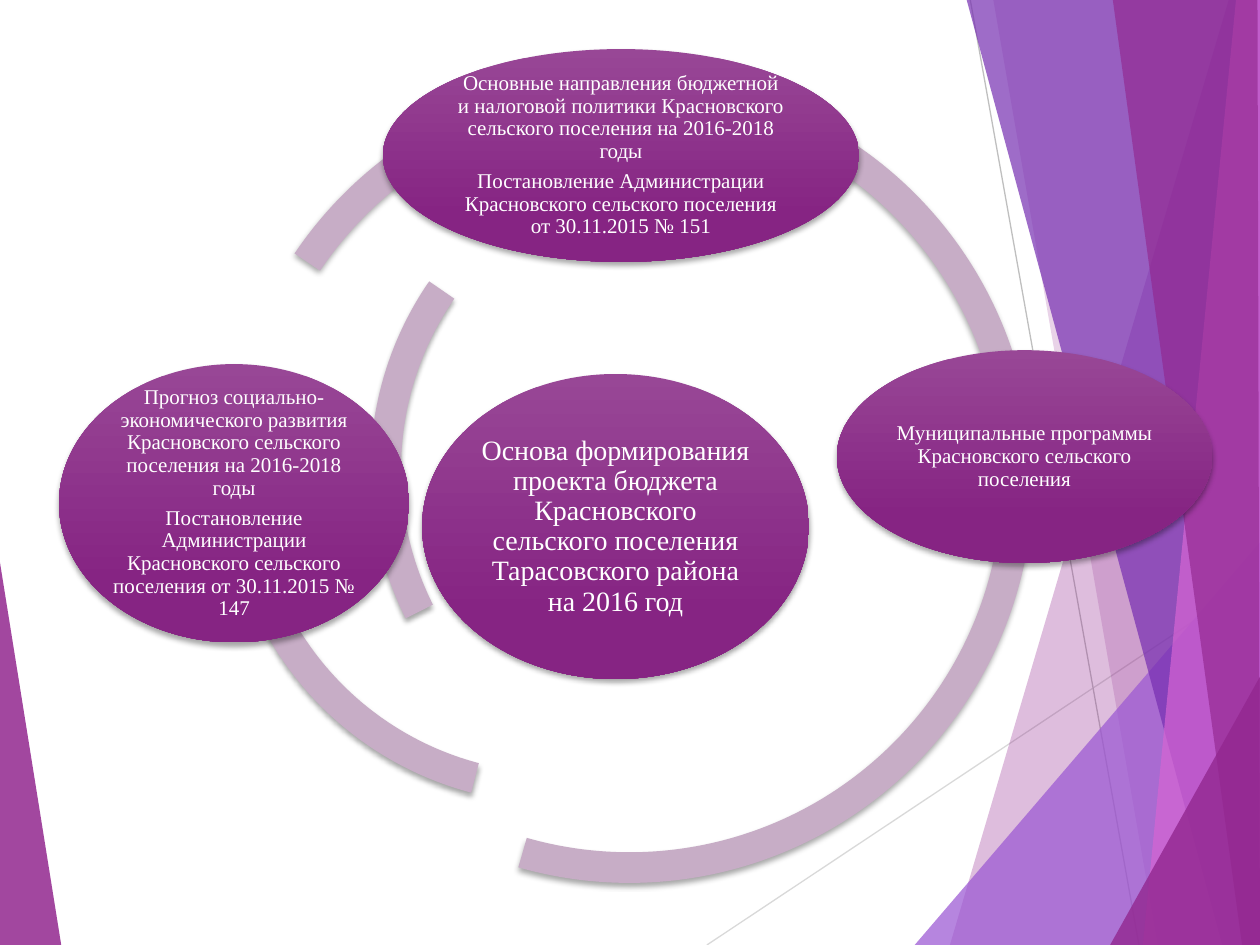
from lxml import etree
from pptx import Presentation
from pptx.dml.color import RGBColor
from pptx.enum.shapes import MSO_CONNECTOR, MSO_SHAPE
from pptx.enum.text import MSO_ANCHOR, PP_ALIGN
from pptx.oxml import parse_xml
from pptx.oxml.ns import qn
from pptx.util import Cm, Pt

STRAIGHT = MSO_CONNECTOR.STRAIGHT
ELLIPSE, BLOCK_ARC = MSO_SHAPE.OVAL, MSO_SHAPE.BLOCK_ARC
MIDDLE, CENTER = MSO_ANCHOR.MIDDLE, PP_ALIGN.CENTER

WHITE = RGBColor(0xFF, 0xFF, 0xFF)
PLUM = RGBColor(0x92, 0x27, 0x8F)
VIOLET = RGBColor(0x9B, 0x57, 0xD3)
INDIGO = RGBColor(0x76, 0x2E, 0xB1)
PINK = RGBColor(0xD6, 0x65, 0xD3)
RING = RGBColor(0xC7, 0xAD, 0xC6)
OVAL_TOP = RGBColor(0x98, 0x47, 0x96)
OVAL_BOTTOM = RGBColor(0x86, 0x24, 0x83)
PALE_GRAY = RGBColor(0xD9, 0xD9, 0xD9)
GRAY = RGBColor(0xBF, 0xBF, 0xBF)

FONT = "Times New Roman"
WIDTH, HEIGHT = 25.4, 19.05
TOP, EDGE = -0.03, 25.43

LEFT_SHARD = ([(TOP, 11.15), (1.24, 19.08), (TOP, HEIGHT)], PLUM, 85)
RIGHT_SHARDS = [
    ([(24.77, 0), (19.15, HEIGHT), (EDGE, HEIGHT), (EDGE, 0)], PLUM, 30),
    ([(20.02, TOP), (23.34, HEIGHT), (EDGE, HEIGHT), (EDGE, TOP)], PLUM, 20),
    ([(18.44, HEIGHT), (EDGE, 10.9), (EDGE, HEIGHT)], VIOLET, 72),
    ([(19.48, TOP), (24.64, HEIGHT), (EDGE, HEIGHT), (EDGE, TOP)], INDIGO, 70),
    ([(24.92, TOP), (23.04, HEIGHT), (EDGE, HEIGHT), (WIDTH, TOP)], PINK, 70),
    ([(22.43, TOP), (25.04, HEIGHT), (WIDTH, HEIGHT), (25.35, TOP)], PLUM, 65),
    ([(22.38, HEIGHT), (EDGE, 13.59), (EDGE, HEIGHT)], PLUM, 80),
]
RAYS = [
    ((14.25, HEIGHT), (EDGE, 11.61), PALE_GRAY),
    ((19.56, 0), (22.96, HEIGHT), GRAY),
]
ARCS = [
    (4.52, 2.84, 13.36, 104.76, 168.94, 0.046),
    (4.55, 1.52, 16.28, 213.97, 105.97, 0.038),
    (7.47, 2.79, 13.36, 153.35, 214.64, 0.046),
]
OVALS = [
    ((8.51, 7.54, 7.8, 6.15), 16, [
        "Основа формирования проекта бюджета Красновского сельского поселения "
        "Тарасовского района на 2016 год"]),
    ((7.72, 0.99, 9.6, 4.29), 12, [
        "Основные направления бюджетной и налоговой политики Красновского "
        "сельского поселения на 2016-2018 годы",
        "Постановление Администрации Красновского сельского поселения "
        "от 30.11.2015 № 151"]),
    ((16.87, 7.06, 7.57, 4.29), 12, [
        "Муниципальные программы Красновского сельского поселения"]),
    ((1.19, 7.34, 7.06, 5.61), 12, [
        "Прогноз социально-экономического развития Красновского сельского "
        "поселения на 2016-2018 годы",
        "Постановление Администрации Красновского сельского поселения "
        "от 30.11.2015 № 147"]),
]
SHADOW = (
    '<a:effectLst xmlns:a="http://schemas.openxmlformats.org/drawingml/2006/main">'
    f'<a:outerShdw blurRad="{Pt(3)}" dist="{Pt(2)}" dir="5400000" rotWithShape="0">'
    '<a:srgbClr val="000000"><a:alpha val="35000"/></a:srgbClr>'
    '</a:outerShdw></a:effectLst>'
)


def add_shard(page, points, color, opacity):
    corners = [(Cm(x), Cm(y)) for x, y in points]
    builder = page.shapes.build_freeform(*corners[0])
    builder.add_line_segments(corners[1:])
    shard = builder.convert_to_shape()
    shard.shadow.inherit = False
    shard.line.fill.background()
    shard.fill.solid()
    shard.fill.fore_color.rgb = color
    tint = shard._element.spPr.find(qn("a:solidFill"))[0]
    etree.SubElement(tint, qn("a:alpha")).set("val", str(opacity * 1000))


def add_ray(page, start, end, color):
    ray = page.shapes.add_connector(STRAIGHT, *map(Cm, start + end))
    ray.line.color.rgb = color
    ray.line.width = Pt(0.75)
    etree.SubElement(ray._element.spPr, qn("a:effectLst"))


def add_shadowed(page, kind, *place):
    shape = page.shapes.add_shape(kind, *map(Cm, place))
    shape.line.fill.background()
    shape._element.spPr.append(parse_xml(SHADOW))
    return shape


def add_arc(page, left, top, size, start, end, thickness):
    arc = add_shadowed(page, BLOCK_ARC, left, top, size, size)
    arc.fill.solid()
    arc.fill.fore_color.rgb = RING
    arc.adjustments[0] = start * 0.6
    arc.adjustments[1] = end * 0.6
    arc.adjustments[2] = thickness


def add_oval(page, place, size, texts):
    oval = add_shadowed(page, ELLIPSE, *place)
    oval.fill.gradient()
    oval.fill.gradient_angle = 270
    stops = zip(oval.fill.gradient_stops, (0, 0.78), (OVAL_TOP, OVAL_BOTTOM))
    for stop, position, color in stops:
        stop.position = position
        stop.color.rgb = color
    frame = oval.text_frame
    frame.word_wrap = True
    frame.vertical_anchor = MIDDLE
    frame.margin_left = frame.margin_right = Cm(0.05)
    frame.margin_top = frame.margin_bottom = Cm(0.05)
    for index, text in enumerate(texts):
        para = frame.add_paragraph() if index else frame.paragraphs[0]
        para.text = text
        para.alignment = CENTER
        para.line_spacing = 0.9
        para.space_after = Pt(size * 0.35)
        para.font.name = FONT
        para.font.size = Pt(size)
        para.font.color.rgb = WHITE


def main():
    deck = Presentation()
    deck.slide_width, deck.slide_height = Cm(WIDTH), Cm(HEIGHT)
    page = deck.slides.add_slide(deck.slide_layouts[6])
    add_shard(page, *LEFT_SHARD)
    for ray in RAYS:
        add_ray(page, *ray)
    for shard in RIGHT_SHARDS:
        add_shard(page, *shard)
    for arc in ARCS:
        add_arc(page, *arc)
    for oval in OVALS:
        add_oval(page, *oval)
    deck.save("out.pptx")


if __name__ == "__main__":
    main()
